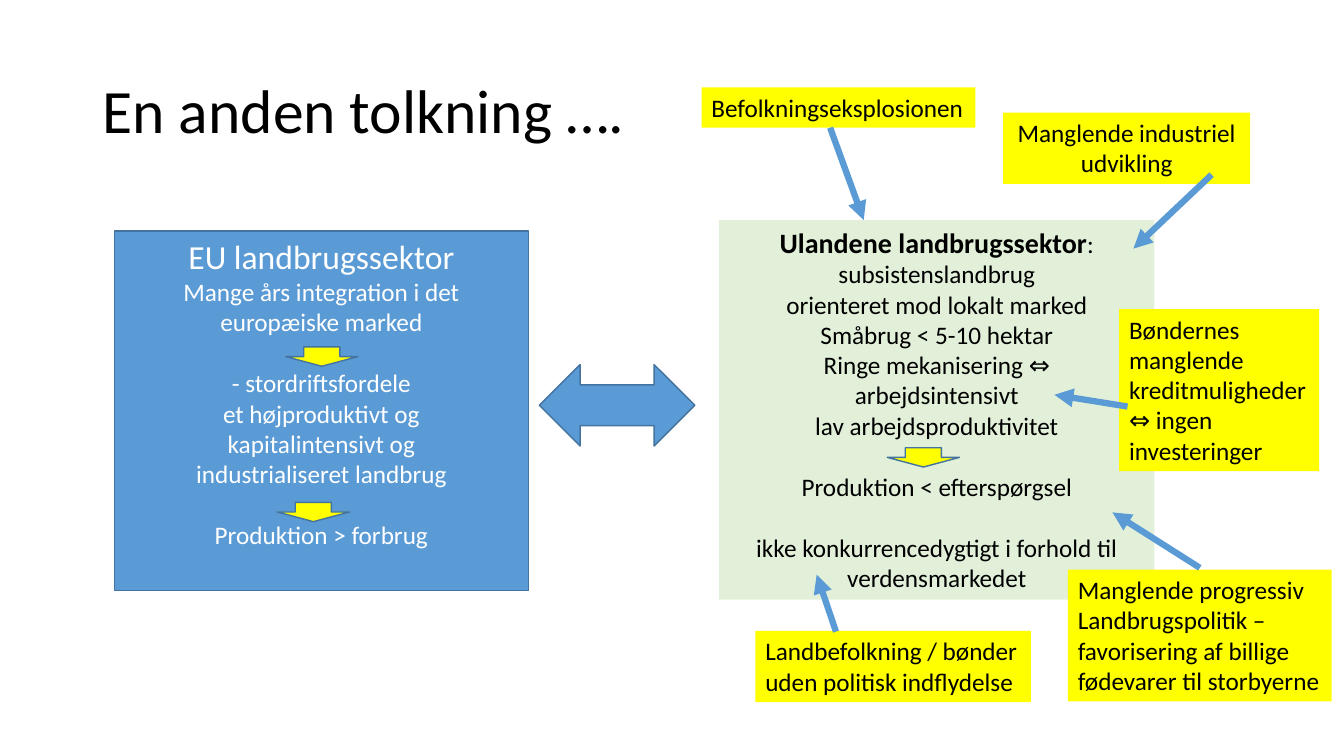
"""Build a slide contrasting EU agriculture with that of developing countries."""

from lxml.etree import SubElement
from pptx import Presentation
from pptx.dml.color import RGBColor
from pptx.enum.shapes import MSO_CONNECTOR, MSO_SHAPE
from pptx.enum.text import MSO_ANCHOR, MSO_AUTO_SIZE, PP_ALIGN
from pptx.oxml.ns import qn
from pptx.util import Inches, Pt

COLORS = {
    "blue": "5B9BD5",
    "outline": "43739E",
    "yellow": "FFFF00",
    "green": "E2F0D9",
    "black": "000000",
    "white": "FFFFFF",
}
CELL = Inches(1 / 12)
COLUMNS, ROWS = 160, 90
BLANK_LINE = 22


def write_text(shape, text, size=18, color="black", align=PP_ALIGN.LEFT,
               anchor=MSO_ANCHOR.TOP, wrap=True, gaps=(), heading_size=None):
    """Write one paragraph per line, with an empty line's space before each line in gaps."""
    frame = shape.text_frame
    frame.text = text
    frame.word_wrap = wrap
    frame.vertical_anchor = anchor
    for index, paragraph in enumerate(frame.paragraphs):
        paragraph.alignment = align
        paragraph.space_before = Pt(BLANK_LINE if index in gaps else 0)
        for run in paragraph.runs:
            run.font.name = "Calibri"
            run.font.size = Pt(heading_size if heading_size and index == 0 else size)
            run.font.color.rgb = RGBColor.from_string(COLORS[color])
    return frame


def add_box(kind, area, fill, outlined=False):
    """Add a filled preset shape whose area is given in grid cells."""
    shape = slide.shapes.add_shape(kind, *[round(cells * CELL) for cells in area])
    shape.shadow.inherit = False
    shape.fill.solid()
    shape.fill.fore_color.rgb = RGBColor.from_string(COLORS[fill])
    if outlined:
        shape.line.color.rgb = RGBColor.from_string(COLORS["outline"])
        shape.line.width = Pt(1)
    else:
        shape.line.fill.background()
    return shape


presentation = Presentation()
presentation.slide_width = Inches(13.33)
presentation.slide_height = Inches(7.5)
slide = presentation.slides.add_slide(presentation.slide_layouts[5])

title = slide.shapes.title
title.left, title.top = round(11 * CELL), round(4.8 * CELL)
title.width, title.height = round((COLUMNS - 22) * CELL), round(17.4 * CELL)
title_frame = write_text(title, "En anden tolkning ….", size=44, anchor=MSO_ANCHOR.MIDDLE)
title_frame.paragraphs[0].line_spacing = 0.9

eu_sector = add_box(MSO_SHAPE.RECTANGLE, (13.6, 27.5, 49.3, 42.8), "blue", outlined=True)
write_text(
    eu_sector,
    "EU landbrugssektor\n"
    "Mange års integration i det europæiske marked\n"
    "- stordriftsfordele\n"
    "et højproduktivt og\n"
    "kapitalintensivt og\n"
    "industrialiseret landbrug\n"
    "Produktion > forbrug",
    color="white", align=PP_ALIGN.CENTER, gaps=(2, 6), heading_size=24,
)

add_box(MSO_SHAPE.LEFT_RIGHT_ARROW, (64.2, 43.4, 18.5, 9.7), "blue", outlined=True)

developing_sector = add_box(MSO_SHAPE.RECTANGLE, (85.6, 26.2, 51.8, 45.2), "green")
developing_frame = write_text(
    developing_sector,
    "Ulandene landbrugssektor\n"
    "subsistenslandbrug\n"
    "orienteret mod lokalt marked\n"
    "Småbrug < 5-10 hektar\n"
    "Ringe mekanisering ⇔\n"
    "arbejdsintensivt\n"
    "lav arbejdsproduktivitet\n"
    "Produktion < efterspørgsel\n"
    "ikke konkurrencedygtigt i forhold til\n"
    "verdensmarkedet",
    align=PP_ALIGN.CENTER, gaps=(7, 8), heading_size=20,
)
heading = developing_frame.paragraphs[0]
heading.runs[0].font.bold = True
colon = heading.add_run()
colon.text = ":"
colon.font.name = "Calibri"
colon.font.size = Pt(18)
colon.font.color.rgb = RGBColor.from_string(COLORS["black"])

for left, top in [(33, 59.8), (34, 41.3), (105.6, 53.3)]:
    add_box(MSO_SHAPE.DOWN_ARROW, (left, top, 8.6, 2.3), "yellow", outlined=True)

causes = [
    ("Befolkningseksplosionen", PP_ALIGN.LEFT,
     (83.5, 10.4, 32.6, 4.8), (98.8, 15.2, 102.8, 26.2)),
    ("Manglende industriel\nudvikling", PP_ALIGN.CENTER,
     (119.4, 13.4, 29.4, 8.5), (144.2, 20.8, 134.9, 29.6)),
    ("Bøndernes\nmanglende\nkreditmuligheder\n⇔ ingen\ninvesteringer", PP_ALIGN.LEFT,
     (133.2, 36.8, 23.8, 19.3), (134.2, 48.4, 125.5, 47)),
    ("Manglende progressiv\nLandbrugspolitik –\nfavorisering af billige\n"
     "fødevarer til storbyerne", PP_ALIGN.LEFT,
     (127.1, 67.8, 31.4, 15.7), (142.8, 67.6, 132.4, 61)),
    ("Landbefolkning / bønder\nuden politisk indflydelse", PP_ALIGN.LEFT,
     (89.9, 75.1, 32.8, 8.5), (99.5, 75.2, 97.2, 68.4)),
]
for text, align, area, arrow_ends in causes:
    label = add_box(MSO_SHAPE.RECTANGLE, area, "yellow")
    label_frame = write_text(label, text, align=align, wrap=False)
    label_frame.auto_size = MSO_AUTO_SIZE.SHAPE_TO_FIT_TEXT

    arrow = slide.shapes.add_connector(
        MSO_CONNECTOR.STRAIGHT, *[round(cells * CELL) for cells in arrow_ends])
    arrow.line.color.rgb = RGBColor.from_string(COLORS["blue"])
    arrow.line.width = Pt(4.5)
    SubElement(arrow.line._get_or_add_ln(), qn("a:tailEnd"), type="triangle")
    SubElement(arrow._element.spPr, qn("a:effectLst"))

presentation.save("out.pptx")
